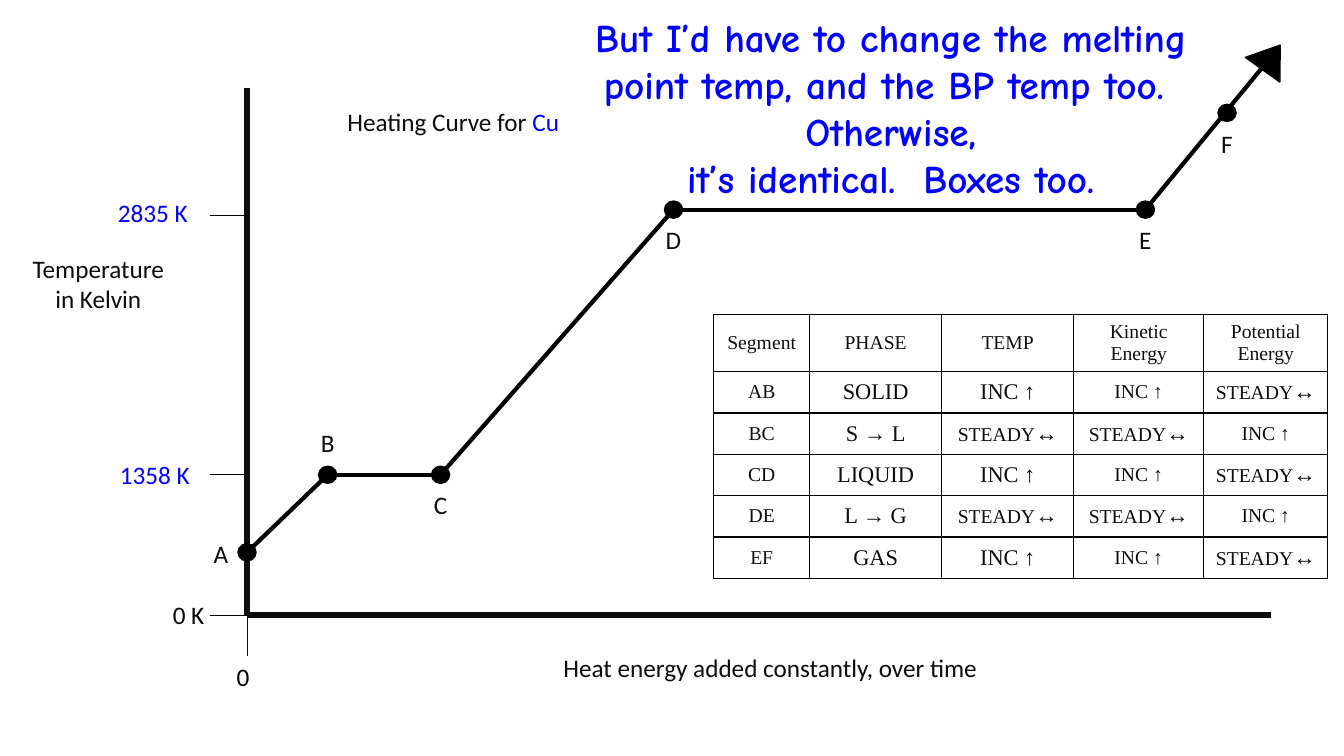
import pptx
import pptx.dml.color
import pptx.enum.shapes
import pptx.enum.text
import pptx.oxml
import pptx.oxml.ns
import pptx.util
from pptx.util import Inches

# Content: lengths in inches
NOTE = ("But I’d have to change the melting point temp, and the BP temp too.  Otherwise,\n"
        "it’s identical.  Boxes too.")
TITLE, SUBSTANCE = "Heating Curve for ", "Cu"

ORIGIN = (2.45, 6.1)
AXIS_TOP, AXIS_RIGHT = 0.87, 12.61
TICK_LEFT, TICK_BOTTOM = 2.08, 6.51
TICK_HEIGHTS = [2.14, 4.71, 6.1]

# name: (centre, label offset from the centre to the label's top middle)
ABOVE, BELOW, BESIDE = (0, -0.52), (0, 0.1), (-0.26, -0.19)
POINTS = {
    "A": ((2.45, 5.48), BESIDE),
    "B": ((3.25, 4.71), ABOVE),
    "C": ((4.37, 4.71), BELOW),
    "D": ((6.68, 2.08), BELOW),
    "E": ((11.36, 2.08), BELOW),
    "F": ((12.17, 1.12), BELOW),
}
ARROW_TIP = (12.61, 0.56)

TABLE_AT = (7.08, 3.12)
COLUMN_WIDTHS = [0.95, 1.31, 1.31, 1.29, 1.23]
HEADER_HEIGHT, ROW_HEIGHT = 0.53, 0.41
UP, FLAT = "INC ↑", "STEADY↔"
PHASES = [
    ("Segment", "PHASE", "TEMP", "Kinetic\nEnergy", "Potential\nEnergy"),
    ("AB", "SOLID", UP, UP, FLAT),
    ("BC", "S → L", FLAT, FLAT, UP),
    ("CD", "LIQUID", UP, UP, FLAT),
    ("DE", "L → G", FLAT, FLAT, UP),
    ("EF", "GAS", UP, UP, FLAT),
]


class Theme:
    ink = pptx.dml.color.RGBColor(0x0D, 0x0D, 0x0D)
    black = pptx.dml.color.RGBColor(0, 0, 0)
    blue = pptx.dml.color.RGBColor(0, 0, 0xFF)
    label_font, note_font, table_font = "Calibri", "Comic Neue", "Times New Roman"
    label_size, note_size, cell_size, large_cell_size = 18, 28, 14, 16
    axis_width, curve_width, tick_width, outline_width = 4.5, 3, 0.5, 1


LEFT, CENTER = pptx.enum.text.PP_ALIGN.LEFT, pptx.enum.text.PP_ALIGN.CENTER
SHAPES = pptx.enum.shapes.MSO_SHAPE

deck = pptx.Presentation()
deck.slide_width, deck.slide_height = Inches(13.33), Inches(7.5)
slide = deck.slides.add_slide(deck.slide_layouts[5])


def style(paragraph, color=Theme.ink, size=Theme.label_size,
          face=Theme.label_font, align=CENTER, bold=False):
    paragraph.alignment = align
    paragraph.font.name = face
    paragraph.font.size = pptx.util.Pt(size)
    paragraph.font.bold = bold
    paragraph.font.color.rgb = color


def add_label(text, left, top, width, height=0.4, **look):
    label = slide.shapes.add_textbox(*map(Inches, (left, top, width, height)))
    label.text_frame.word_wrap = True
    label.text_frame.paragraphs[0].text = text
    style(label.text_frame.paragraphs[0], **look)


def add_line(start, end, width, color=Theme.ink):
    line = slide.shapes.add_connector(pptx.enum.shapes.MSO_CONNECTOR.STRAIGHT,
                                      *map(Inches, (*start, *end)))
    line.line.width = pptx.util.Pt(width)
    line.line.color.rgb = color
    effects = pptx.oxml.parse_xml(f"<a:effectLst {pptx.oxml.ns.nsdecls('a')}/>")
    line._element.spPr.append(effects)


def add_marker(preset, center, width, height, rotation=0):
    left, top = center[0] - width / 2, center[1] - height / 2
    marker = slide.shapes.add_shape(preset, *map(Inches, (left, top, width, height)))
    marker.rotation = rotation
    marker.shadow.inherit = False
    marker.fill.solid()
    marker.fill.fore_color.rgb = Theme.black
    marker.line.color.rgb = Theme.black
    marker.line.width = pptx.util.Pt(Theme.outline_width)


# Title
title = slide.shapes.title
title.left, title.top, title.width, title.height = map(Inches, (3.24, 1, 2.51, 0.4))
heading = title.text_frame.paragraphs[0]
heading.text = TITLE
style(heading)
substance = heading.add_run()
substance.text = SUBSTANCE
substance.font.color.rgb = Theme.blue

# Axes and ticks
add_line((ORIGIN[0], AXIS_TOP), ORIGIN, Theme.axis_width)
add_line((AXIS_RIGHT, ORIGIN[1]), ORIGIN, Theme.axis_width)
for height in TICK_HEIGHTS:
    add_line((TICK_LEFT, height), (ORIGIN[0], height), Theme.tick_width, Theme.black)
add_line((ORIGIN[0], TICK_BOTTOM), ORIGIN, Theme.tick_width)

# Axis labels
add_label("Temperature in Kelvin", 0.19, 2.46, 1.57, 0.71)
add_label("Heat energy added constantly, over time", 5.47, 6.42, 4.34)
add_label("2835 K", 1.07, 1.91, 1.01, color=Theme.blue, align=LEFT)
add_label("1358 K", 1.09, 4.51, 1.01, color=Theme.blue, align=LEFT)
add_label("0 K", 1.47, 5.9, 0.8, color=Theme.black)
add_label("0", 2.1, 6.51, 0.62, color=Theme.black)

# Heating curve: F lies on the last segment
bends = [POINTS[name][0] for name in "ABCDE"] + [ARROW_TIP]
for start, end in zip(bends, bends[1:]):
    add_line(start, end, Theme.curve_width, Theme.black)
add_marker(SHAPES.ISOSCELES_TRIANGLE, (12.61, 0.57), 0.42, 0.3, 35.6)
for name, ((x, y), (dx, dy)) in POINTS.items():
    add_marker(SHAPES.OVAL, (x, y), 0.18, 0.17)
    add_label(name, x + dx - 0.4, y + dy, 0.8)

# Phase table
table_height = HEADER_HEIGHT + ROW_HEIGHT * (len(PHASES) - 1)
phases = slide.shapes.add_table(
    len(PHASES), len(COLUMN_WIDTHS),
    *map(Inches, (*TABLE_AT, sum(COLUMN_WIDTHS), table_height))).table
phases.first_row = phases.horz_banding = False
for column, width in zip(phases.columns, COLUMN_WIDTHS):
    column.width = Inches(width)


def add_borders(cell):
    properties = cell._tc.get_or_add_tcPr()
    for side in ("lnL", "lnR", "lnT", "lnB"):
        properties.append(pptx.oxml.parse_xml(
            f"<a:{side} {pptx.oxml.ns.nsdecls('a')} w='{pptx.util.Pt(Theme.outline_width)}'>"
            f"<a:solidFill><a:srgbClr val='{Theme.black}'/></a:solidFill></a:{side}>"))


for row, entries in enumerate(PHASES):
    phases.rows[row].height = Inches(ROW_HEIGHT if row else HEADER_HEIGHT)
    for column, entry in enumerate(entries):
        cell = phases.cell(row, column)
        add_borders(cell)
        cell.fill.background()
        cell.vertical_anchor = pptx.enum.text.MSO_ANCHOR.MIDDLE
        content = cell.text_frame.paragraphs[0]
        large = row > 0 and column in (1, 2) and entry != FLAT
        content.text = entry.removesuffix("↔")
        style(content, face=Theme.table_font,
              size=Theme.large_cell_size if large else Theme.cell_size)
        if entry == FLAT:
            arrow = content.add_run()
            arrow.text = "↔"
            arrow.font.size = pptx.util.Pt(Theme.large_cell_size)

# Note
add_label(NOTE, 5.58, 0.08, 6.51, 2.29, color=Theme.blue,
          size=Theme.note_size, face=Theme.note_font, bold=True)

deck.save("out.pptx")
